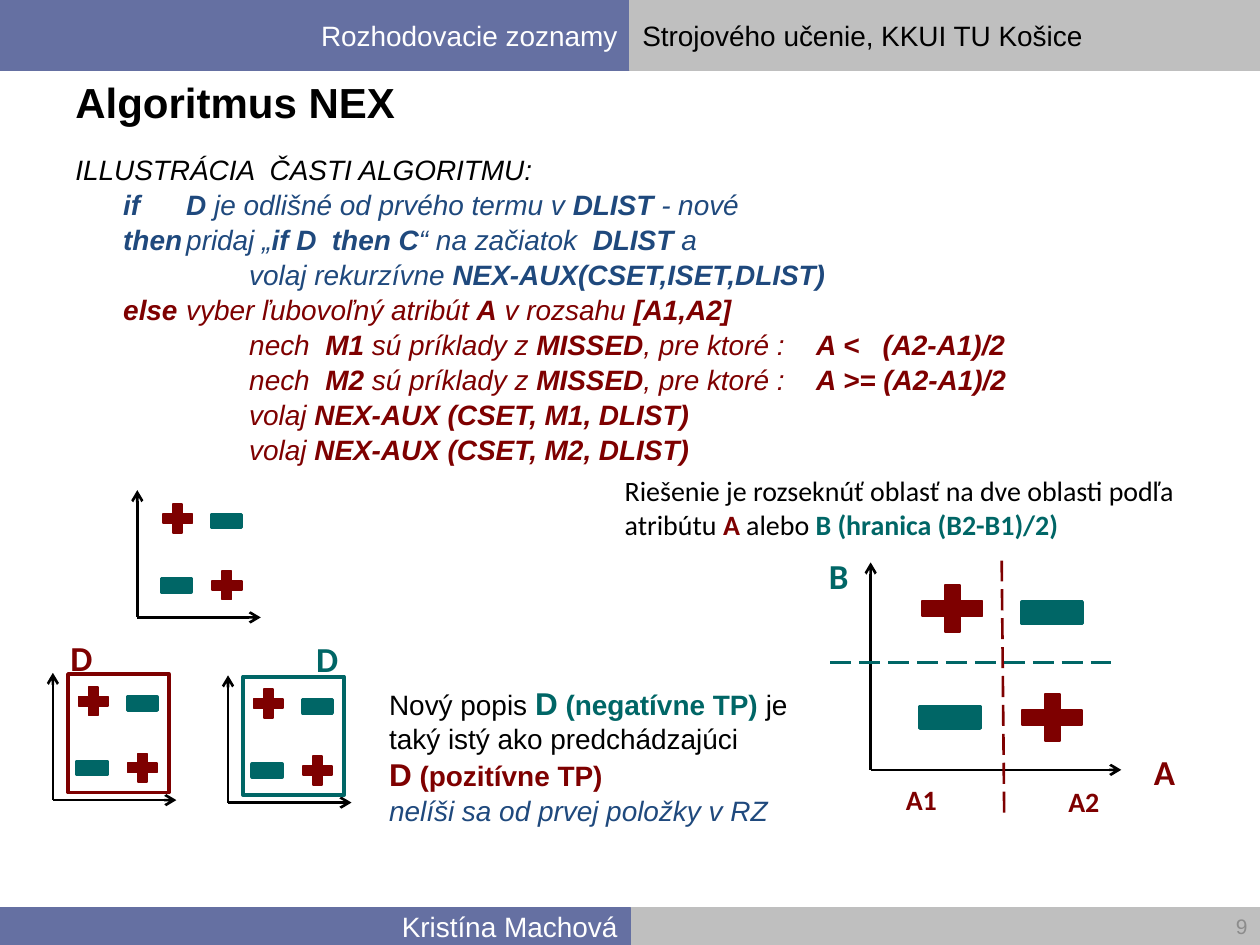
from dataclasses import dataclass

from lxml import etree
from pptx import Presentation
from pptx.dml.color import RGBColor
from pptx.enum.dml import MSO_LINE
from pptx.enum.shapes import MSO_CONNECTOR, MSO_SHAPE
from pptx.enum.text import MSO_ANCHOR, MSO_AUTO_SIZE, PP_ALIGN
from pptx.oxml.ns import qn
from pptx.util import Inches, Pt

RECT, PLUS, MINUS = MSO_SHAPE.RECTANGLE, MSO_SHAPE.MATH_PLUS, MSO_SHAPE.MATH_MINUS
STRAIGHT, LONG_DASH = MSO_CONNECTOR.STRAIGHT, MSO_LINE.LONG_DASH
LEFT, RIGHT = PP_ALIGN.LEFT, PP_ALIGN.RIGHT
MIDDLE = MSO_ANCHOR.MIDDLE
FIT_SHAPE = MSO_AUTO_SIZE.SHAPE_TO_FIT_TEXT


@dataclass(frozen=True)
class Theme:
    white: str = "FFFFFF"
    black: str = "000000"
    band_blue: str = "6570A2"
    band_grey: str = "BFBFBF"
    number_grey: str = "8C8C8C"
    blue: str = "1F497D"
    red: str = "7E0000"
    teal: str = "006666"
    sans: str = "Arial"
    label: str = "Calibri"
    title: int = 24
    axis: int = 20
    emphasis: int = 18
    body: int = 16
    number: int = 12


THEME = Theme()


def rgb(colour):
    return RGBColor.from_string(colour)


def set_font(font, size=None, name=None, colour=None, bold=None, italic=None):
    if size:
        font.size = Pt(size)
    if name:
        font.name = name
    if colour:
        font.color.rgb = rgb(colour)
    if bold is not None:
        font.bold = bold
    if italic is not None:
        font.italic = italic


def toggled(text):
    """Split text at | into runs that alternate between regular and bold."""
    return [(part, {"bold": i % 2 == 1}) for i, part in enumerate(text.split("|")) if part]


class SlideBuilder:
    def __init__(self, slide, theme):
        self.slide = slide
        self.shapes = slide.shapes
        self.theme = theme

    def fill_paragraph(self, paragraph, runs, align=LEFT, **font):
        paragraph.alignment = align
        set_font(paragraph.font, **font)
        for text, changes in runs:
            run = paragraph.add_run()
            run.text = text
            set_font(run.font, **changes)

    def shape(self, kind, box, fill=None, line=None, width=1):
        shape = self.shapes.add_shape(kind, *map(Inches, box))
        shape.shadow.inherit = False
        if fill:
            shape.fill.solid()
            shape.fill.fore_color.rgb = rgb(fill)
        else:
            shape.fill.background()
        shape.line.color.rgb = rgb(line or fill)
        shape.line.width = Pt(width)
        return shape

    def band(self, box, fill, text="", align=LEFT, colour=None):
        frame = self.shape(RECT, box, fill, width=0.75).text_frame
        frame.vertical_anchor = MIDDLE
        if text:
            self.fill_paragraph(frame.paragraphs[0], [(text, {})], align,
                                size=self.theme.body, name=self.theme.sans, colour=colour)

    def text(self, box, paragraphs, anchor=None, align=LEFT, wrap=True, grow=False, **font):
        """Add a text box; each paragraph is a list of (text, font changes) runs."""
        frame = self.shapes.add_textbox(*map(Inches, box)).text_frame
        frame.word_wrap = wrap
        if anchor is not None:
            frame.vertical_anchor = anchor
        if grow:
            frame.auto_size = FIT_SHAPE
        for i, runs in enumerate(paragraphs):
            paragraph = frame.add_paragraph() if i else frame.paragraphs[0]
            self.fill_paragraph(paragraph, runs, align, **font)
        return frame

    def label(self, box, text, colour, size):
        self.text(box, [[(text, {})]], wrap=False, grow=True,
                  size=size, name=self.theme.label, colour=colour, bold=True)

    def line(self, start, end, colour, dash=None, arrow_at_start=False):
        line = self.shapes.add_connector(STRAIGHT, *map(Inches, (*start, *end)))
        line.line.color.rgb = rgb(colour)
        line.line.width = Pt(1.5)
        if dash is not None:
            line.line.dash_style = dash
        if arrow_at_start:
            outline = line._element.spPr.find(qn("a:ln"))
            etree.SubElement(outline, qn("a:headEnd"), type="arrow")
        etree.SubElement(line._element.spPr, qn("a:effectLst"))

    def plot(self, origin, scale=(1, 1), frame=None, labels=()):
        """Draw, as one group, two axes with a plus and a minus on each diagonal."""
        x, y = origin
        sx, sy = scale
        t = self.theme
        self.shapes = self.slide.shapes.add_group_shape().shapes
        for tip in ((x, y - 1.01 * sy), (x + 0.98 * sx, y)):
            self.line(tip, origin, t.black, arrow_at_start=True)
        for kind, dx, dy, height, colour, width in (
            (PLUS, 0.55, 0.41, 0.31, t.red, 1),
            (MINUS, 0.55, 0.99, 0.45, t.teal, 2),
            (PLUS, 0.16, 0.94, 0.31, t.red, 1),
            (MINUS, 0.15, 0.48, 0.45, t.teal, 2),
        ):
            box = (x + dx * sx, y - dy * sy, 0.32 * sx, height * sy)
            self.shape(kind, box, colour, width=width)
        if frame:
            self.shape(RECT, (x + 0.12, y - 1, 0.8, 0.94), line=frame, width=2.25)
        for label in labels:
            self.label(*label)
        self.shapes = self.slide.shapes

    def algorithm(self, box, steps):
        t = self.theme
        frame = self.text(box, [toggled(step) for _, step in steps],
                          size=t.body, name=t.sans, italic=True)
        for paragraph, (colour, _) in zip(frame.paragraphs, steps):
            paragraph.font.color.rgb = rgb(colour)
            paragraph.space_before = Pt(0.8)
            properties = paragraph._p.get_or_add_pPr()
            properties.set("marL", str(Inches(0.38)))
            properties.set("indent", str(Inches(-0.38)))
            properties.set("defTabSz", str(Inches(0.5)))


def main():
    t = THEME
    deck = Presentation()
    deck.slide_width, deck.slide_height = Inches(10), Inches(7.5)
    page = SlideBuilder(deck.slides.add_slide(deck.slide_layouts[6]), t)

    page.band((5, 7.2, 5, 0.3), t.band_grey)
    page.band((0, 0, 5, 0.56), t.band_blue, "Rozhodovacie zoznamy", RIGHT, t.white)
    page.band((5, 0, 5, 0.56), t.band_grey, "Strojového učenie, KKUI TU Košice", LEFT, t.black)
    page.band((0, 7.2, 5, 0.3), t.band_blue, "Kristína Machová", RIGHT, t.white)
    page.text((0.5, 0.56, 9, 0.5), [[("Algoritmus NEX", {})]], anchor=MIDDLE,
              size=t.title, name=t.sans, colour=t.black, bold=True)

    page.algorithm((0.5, 1.16, 9, 2.55), [
        (t.black, "ILLUSTRÁCIA  ČASTI ALGORITMU:"),
        (t.blue, "\t|if\tD| je odlišné od prvého termu v |DLIST |- nové"),
        (t.blue, "\t|then|\tpridaj „|if D  then C|“ na začiatok  |DLIST |a"),
        (t.blue, "\t\t\tvolaj rekurzívne |NEX-AUX(CSET,ISET,DLIST)"),
        (t.red, "\t|else|\tvyber ľubovoľný atribút |A| v rozsahu |[A1,A2]"),
        (t.red, "\t\t\tnech  |M1| sú príklady z |MISSED|, pre ktoré :\t|A <   (A2-A1)/2"),
        (t.red, "\t\t\tnech  |M2| sú príklady z |MISSED|, pre ktoré :\t|A >= (A2-A1)/2"),
        (t.red, "\t\t\tvolaj |NEX-AUX (CSET, M1, DLIST)"),
        (t.red, "\t\t\tvolaj |NEX-AUX (CSET, M2, DLIST)"),
    ])
    page.text((6.58, 7.2, 3.42, 0.3), [[("9", {})]], anchor=MIDDLE, align=RIGHT,
              size=t.number, name=t.sans, colour=t.number_grey)

    page.plot((1.09, 4.9))
    negative = {"colour": t.teal, "bold": True}
    positive = {"colour": t.red, "bold": True}
    page.text((2.99, 5.38, 3.66, 1.28), [
        [("Nový popis ", {}), ("D", {**negative, "size": t.emphasis}),
         (" (negatívne TP) ", negative), ("je taký istý ako predchádzajúci", {})],
        [("D", {**positive, "size": t.emphasis}), (" (pozitívne TP)", positive)],
        [("nelíši sa od prvej položky v RZ", {"colour": t.blue, "italic": True})],
    ], grow=True, size=t.body, name=t.sans, colour=t.black)
    page.text((4.86, 3.71, 4.57, 0.64), [[
        ("Riešenie je rozseknúť oblasť na dve oblasti podľa atribútu ", {}),
        ("A", positive), (" alebo ", {}), ("B (hranica (B2-B1)/2)", negative),
    ]], grow=True, size=t.body, name=t.label, colour=t.black)

    page.plot((6.91, 6.11), scale=(2.03, 1.63), labels=[
        ((8.38, 6.18, 0.45, 0.37), "A2", t.red, t.body),
        ((7.09, 6.16, 0.45, 0.37), "A1", t.red, t.body),
        ((6.48, 4.35, 0.36, 0.44), "B", t.teal, t.axis),
        ((9.06, 5.91, 0.37, 0.44), "A", t.red, t.axis),
    ])
    page.plot((0.42, 6.35), frame=t.red,
              labels=[((0.46, 5, 0.38, 0.44), "D", t.red, t.axis)])
    page.plot((1.81, 6.37), frame=t.teal,
              labels=[((2.41, 5.01, 0.38, 0.44), "D", t.teal, t.axis)])
    page.line((7.97, 6.45), (7.95, 4.45), t.red, LONG_DASH)
    page.line((6.59, 5.26), (8.82, 5.26), t.teal, LONG_DASH)

    deck.save("out.pptx")


if __name__ == "__main__":
    main()
